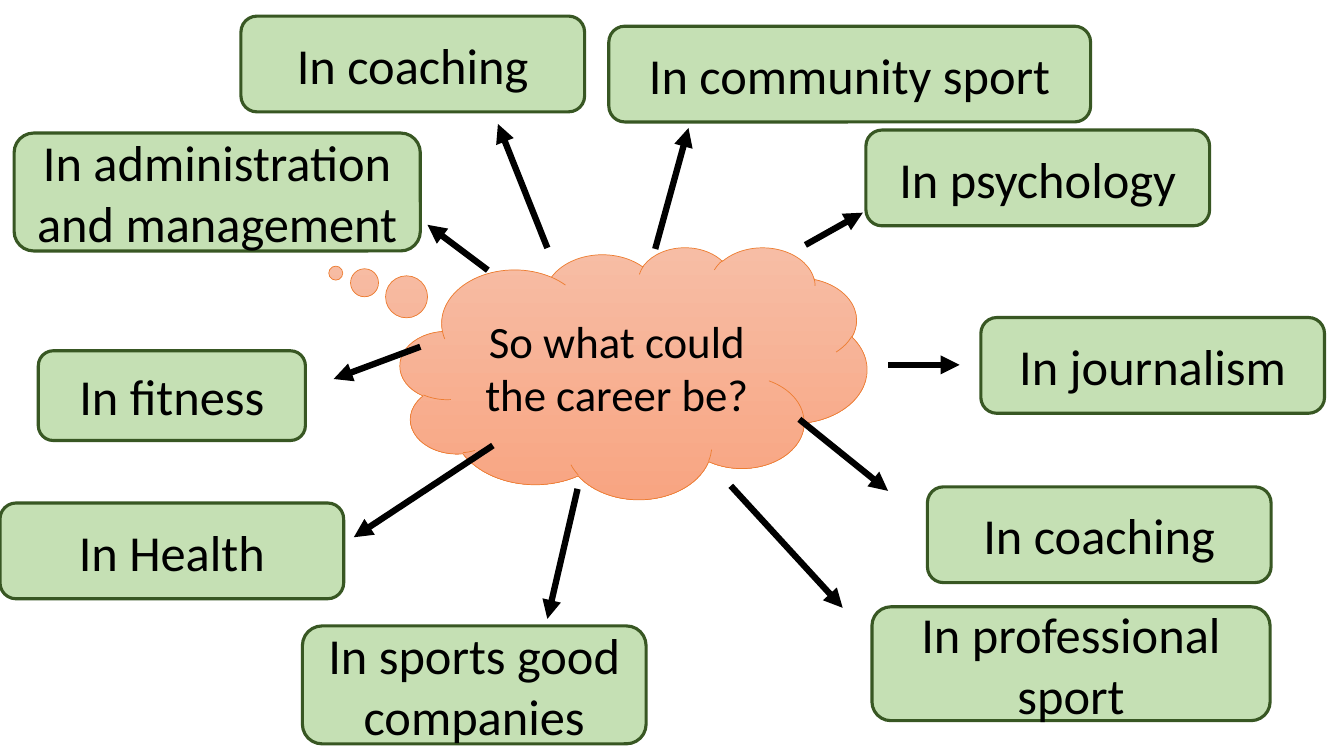
"""Builds a mind map of careers in sport around a central question."""
import lxml.etree
import pptx
import pptx.dml.color
import pptx.enum.shapes
import pptx.enum.text
import pptx.oxml.ns
import pptx.util

RGBColor = pptx.dml.color.RGBColor
SHAPES = pptx.enum.shapes.MSO_SHAPE

BLACK = RGBColor(0x00, 0x00, 0x00)
LIGHT_GREEN = RGBColor(0xC5, 0xE0, 0xB4)
DARK_GREEN = RGBColor(0x38, 0x57, 0x23)
ORANGE = RGBColor(0xED, 0x7D, 0x31)
CLOUD_TOP = RGBColor(0xF7, 0xBD, 0xA5)
CLOUD_BOTTOM = RGBColor(0xF8, 0xA5, 0x82)

FONT = "Calibri"
COLUMNS, ROWS = 133.33, 75
WIDTH, HEIGHT = pptx.util.Inches(13.33), pptx.util.Inches(7.5)
BOX_SIZE = (34.1, 9.5)

QUESTION = "So what could the career be?"
CLOUD_PLACE = (39.7, 24.5, 46.3, 25)
CLOUD_TAIL = (-0.638, -0.396)

CAREERS = [
    ("In coaching", (23.9, 1.6), BOX_SIZE),
    ("In community sport", (60.4, 2.6), (47.8, 9.5)),
    ("In psychology", (85.9, 12.9), BOX_SIZE),
    ("In journalism", (97.3, 31.5), BOX_SIZE),
    ("In coaching", (92, 48.3), BOX_SIZE),
    ("In professional sport", (86.5, 60.2), (39.5, 11.3)),
    ("In sports good companies", (30, 62.1), (34.1, 11.7)),
    ("In Health", (0, 49.9), BOX_SIZE),
    ("In fitness", (3.8, 34.8), (26.5, 8.9)),
    ("In administration and management", (1.4, 13.2), (40.3, 11.7)),
]

ARROWS = [
    ((54.3, 24.6), (49.4, 12.3)),
    ((65, 24.7), (68.3, 12.7)),
    ((79.9, 24.3), (85.6, 21.1)),
    ((88.1, 36.2), (95.2, 36.2)),
    ((79.3, 41.6), (88.1, 48.7)),
    ((72.5, 48.2), (83.6, 60.3)),
    ((57.3, 48.5), (54.3, 61.4)),
    ((48.9, 44.2), (35.1, 53.3)),
    ((41.7, 34.4), (33.1, 37.6)),
    ((48.4, 26.8), (42.4, 22.3)),
]


def to_slide(column, row):
    """Turn a grid position or size into slide lengths."""
    return round(column * WIDTH / COLUMNS), round(row * HEIGHT / ROWS)


def add_label(slide, kind, text, place, size, line_color, line_width):
    """Add an outlined shape with centred text."""
    shape = slide.shapes.add_shape(kind, *to_slide(*place[:2]), *to_slide(*place[2:]))
    shape.shadow.inherit = False
    shape.line.color.rgb = line_color
    shape.line.width = pptx.util.Pt(line_width)
    frame = shape.text_frame
    frame.word_wrap = True
    frame.vertical_anchor = pptx.enum.text.MSO_ANCHOR.MIDDLE
    frame.text = text
    paragraph = frame.paragraphs[0]
    paragraph.alignment = pptx.enum.text.PP_ALIGN.CENTER
    font = paragraph.runs[0].font
    font.name = FONT
    font.size = pptx.util.Pt(size)
    font.color.rgb = BLACK
    return shape


def add_cloud(slide):
    """Add the central question in a shaded thought cloud."""
    cloud = add_label(slide, SHAPES.CLOUD_CALLOUT, QUESTION, CLOUD_PLACE, 32, ORANGE, 0.5)
    for index, offset in enumerate(CLOUD_TAIL):
        cloud.adjustments[index] = offset
    cloud.fill.gradient()
    cloud.fill.gradient_angle = 270
    for stop, color in zip(cloud.fill.gradient_stops, (CLOUD_TOP, CLOUD_BOTTOM)):
        stop.color.rgb = color


def add_arrow(slide, start, end):
    """Add a thick black arrow pointing at its end."""
    arrow = slide.shapes.add_connector(
        pptx.enum.shapes.MSO_CONNECTOR.STRAIGHT, *to_slide(*start), *to_slide(*end))
    arrow.line.color.rgb = BLACK
    arrow.line.width = pptx.util.Pt(4.5)
    properties = arrow.line._get_or_add_ln()
    lxml.etree.SubElement(properties, pptx.oxml.ns.qn("a:tailEnd"), type="triangle")
    lxml.etree.SubElement(arrow._element.spPr, pptx.oxml.ns.qn("a:effectLst"))


def main():
    """Build and save the slide."""
    presentation = pptx.Presentation()
    presentation.slide_width, presentation.slide_height = WIDTH, HEIGHT
    slide = presentation.slides.add_slide(presentation.slide_layouts[6])
    add_cloud(slide)
    for text, corner, size in CAREERS:
        box = add_label(slide, SHAPES.ROUNDED_RECTANGLE, text, corner + size, 36, DARK_GREEN, 2.25)
        box.fill.solid()
        box.fill.fore_color.rgb = LIGHT_GREEN
    for start, end in ARROWS:
        add_arrow(slide, start, end)
    presentation.save("out.pptx")


if __name__ == "__main__":
    main()
